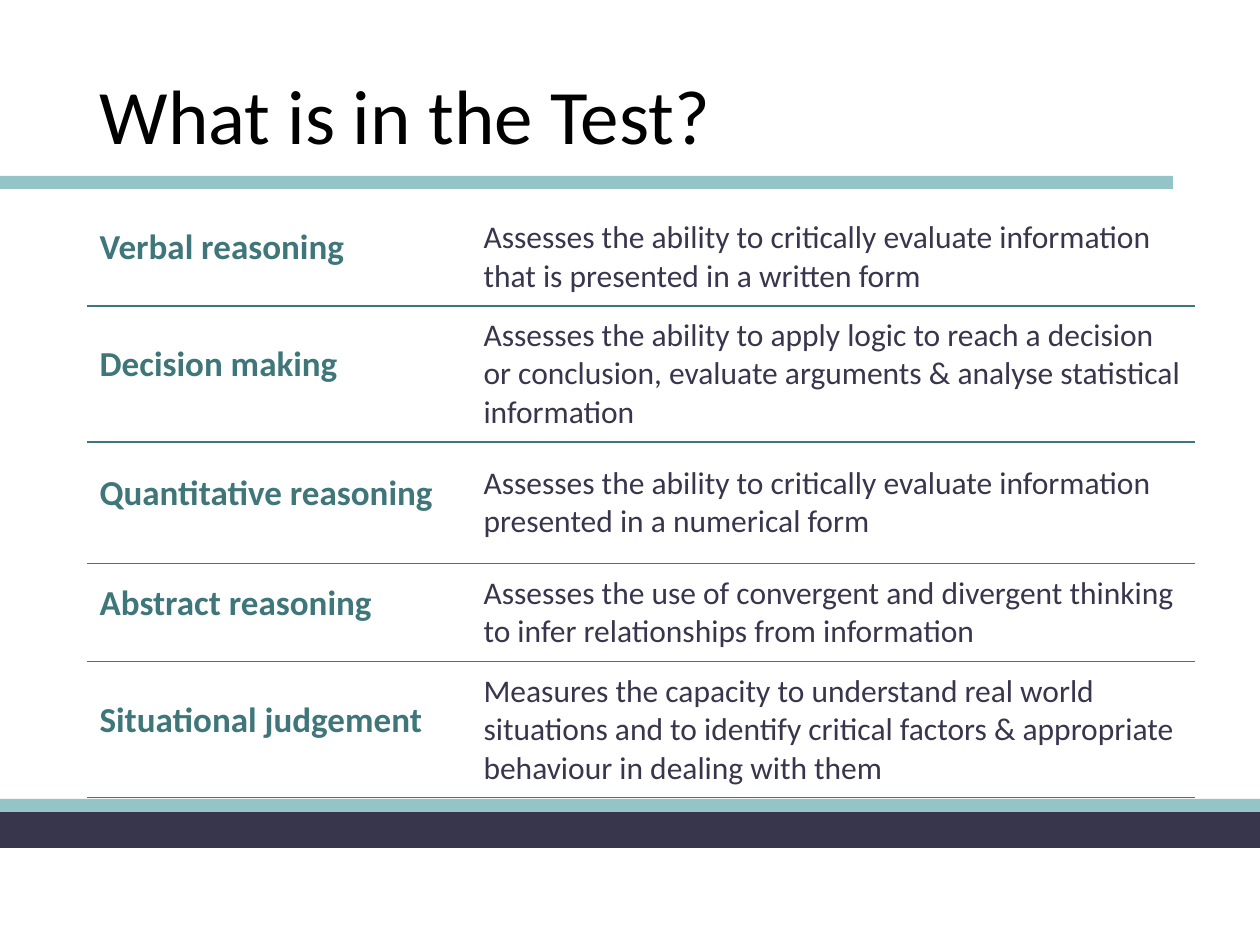
from lxml import etree
from pptx import Presentation
from pptx import util as u
from pptx.dml.color import RGBColor
from pptx.enum import shapes, text
from pptx.oxml.ns import qn

PX = 914400 // 126
FONT = "Calibri"
NO_GRID = "{2D5ABB26-0587-4C30-8999-92F81FD0307C}"
COLORS = {"black": "000000", "navy": "38364D", "aqua": "92C4C8", "teal": "3E767A"}
SECTIONS = [
    ("Verbal reasoning", 98,
     "Assesses the ability to critically evaluate information that is presented in a written form"),
    ("Decision making", 136,
     "Assesses the ability to apply logic to reach a decision or conclusion, "
     "evaluate arguments & analyse statistical information"),
    ("Quantitative reasoning", 122,
     "Assesses the ability to critically evaluate information presented in a numerical form"),
    ("Abstract reasoning", 98,
     "Assesses the use of convergent and divergent thinking to infer relationships from information"),
    ("Situational judgement", 136,
     "Measures the capacity to understand real world situations and to identify "
     "critical factors & appropriate behaviour in dealing with them"),
]


def px(*values):
    """Turn pixel lengths into EMU."""
    return [u.Emu(v * PX) for v in values]


def style(p, size, color, bold=False):
    """Set the font of a whole paragraph."""
    p.font.name, p.font.size, p.font.bold = FONT, u.Pt(size), bold
    p.font.color.rgb = RGBColor.from_string(COLORS[color])


def add_bar(s, box, color):
    """Draw a plain decorative bar."""
    sp = s.shapes.add_shape(shapes.MSO_SHAPE.RECTANGLE, *px(*box))
    sp.shadow.inherit = False
    sp.fill.solid()
    sp.fill.fore_color.rgb = RGBColor.from_string(COLORS[color])
    sp.line.fill.background()


def add_title(s, box, wording):
    """Place and format the title placeholder."""
    sp = s.shapes.title
    sp.left, sp.top, sp.width, sp.height = px(*box)
    tf = sp.text_frame
    tf.text = wording
    tf.vertical_anchor = text.MSO_ANCHOR.MIDDLE
    p = tf.paragraphs[0]
    p.alignment, p.line_spacing = text.PP_ALIGN.LEFT, 0.9
    style(p, 44, "black")


def add_rule(cell, edge):
    """Give one edge of a cell a thin teal line."""
    ln = etree.Element(qn(f"a:{edge}"), w=str(u.Pt(0.75)))
    fill = etree.SubElement(ln, qn("a:solidFill"))
    etree.SubElement(fill, qn("a:srgbClr"), val=COLORS["teal"])
    cell._tc.get_or_add_tcPr().insert(0, ln)


def fill_cell(cell, wording):
    """Write a cell's text and return its paragraph."""
    cell.text = wording
    cell.fill.background()
    cell.vertical_anchor = text.MSO_ANCHOR.MIDDLE
    cell.margin_left = cell.margin_right = u.Inches(0.1)
    cell.margin_top = cell.margin_bottom = u.Inches(0.08)
    return cell.text_frame.paragraphs[0]


def add_sections(s, left, top, widths):
    """Build the table of test sections and their descriptions."""
    height = sum(h for _, h, _ in SECTIONS)
    box = px(left, top, sum(widths), height)
    table = s.shapes.add_table(len(SECTIONS), len(widths), *box).table
    table.first_row = table.horz_banding = False
    table._tbl.tblPr.find(qn("a:tableStyleId")).text = NO_GRID
    for column, width in zip(table.columns, px(*widths)):
        column.width = width
    for i, (name, row_height, description) in enumerate(SECTIONS):
        row = table.rows[i]
        row.height = px(row_height)[0]
        p = fill_cell(row.cells[0], name)
        p.line_spacing = u.Pt(13.5)
        style(p, 20, "teal", True)
        p = fill_cell(row.cells[1], description)
        p.space_before = p.space_after = u.Pt(3)
        style(p, 18, "navy")
        for cell in row.cells:
            add_rule(cell, "lnB")
            if i:
                add_rule(cell, "lnT")


def main():
    """Build the slide and save it."""
    prs = Presentation()
    prs.slide_width, prs.slide_height = px(1260, 945)
    s = prs.slides.add_slide(prs.slide_layouts[5])
    add_bar(s, (0, 811, 1260, 37), "navy")
    add_bar(s, (0, 799, 1260, 13), "aqua")
    add_bar(s, (0, 176, 1173, 13), "aqua")
    add_title(s, (87, 50, 1086, 139), "What is in the Test?")
    add_sections(s, 87, 208, (384, 724))
    prs.save("out.pptx")


if __name__ == "__main__":
    main()
